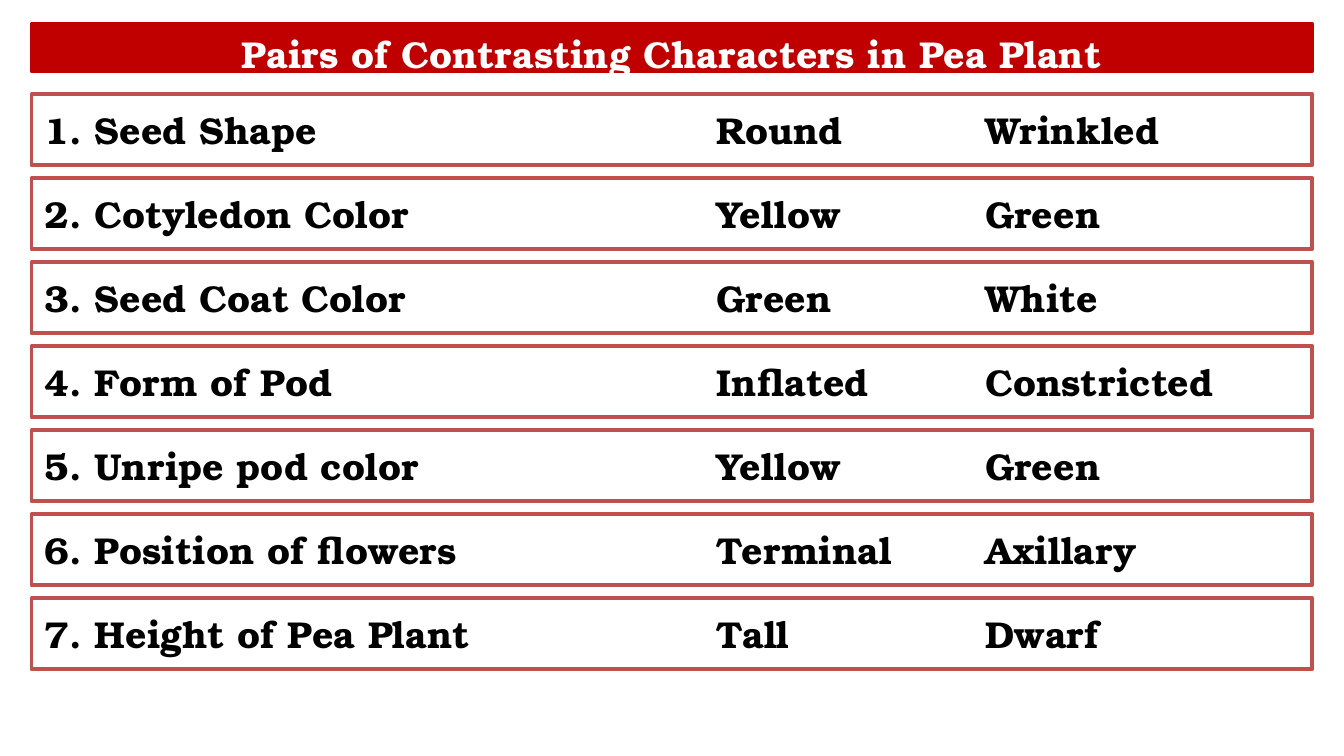
from lxml.etree import SubElement
from pptx import Presentation
from pptx.dml.color import RGBColor
from pptx.enum.shapes import MSO_SHAPE
from pptx.enum.text import MSO_ANCHOR, PP_ALIGN
from pptx.oxml.ns import qn
from pptx.util import Inches, Pt

RED = RGBColor(0xC0, 0x00, 0x00)
BORDER = RGBColor(0xC0, 0x50, 0x4D)
WHITE = RGBColor(0xFF, 0xFF, 0xFF)
BLACK = RGBColor(0x00, 0x00, 0x00)

SLIDE_WIDTH = 10
SLIDE_HEIGHT = SLIDE_WIDTH * 9 / 16
WIDTH = 9.53
LEFT = (SLIDE_WIDTH - WIDTH) / 2
TITLE_TOP, TITLE_HEIGHT = 0.18, 0.35
ROWS_TOP, ROW_HEIGHT = 0.7, 0.53
ROW_PITCH = SLIDE_HEIGHT / 9
TRAIT_COLUMNS = (5, 7)

CHARACTERS = [
    ("Seed Shape", "Round", "Wrinkled"),
    ("Cotyledon Color", "Yellow", "Green"),
    ("Seed Coat Color", "Green", "White"),
    ("Form of Pod", "Inflated", "Constricted"),
    ("Unripe pod color", "Yellow", "Green"),
    ("Position of flowers", "Terminal", "Axillary"),
    ("Height of Pea Plant", "Tall", "Dwarf"),
]

prs = Presentation()
prs.slide_width, prs.slide_height = Inches(SLIDE_WIDTH), Inches(SLIDE_HEIGHT)
s = prs.slides.add_slide(prs.slide_layouts[6])


def add_bar(top, height, fill, line, text, color, align, anchor):
    sp = s.shapes.add_shape(MSO_SHAPE.RECTANGLE, Inches(LEFT), Inches(top),
                            Inches(WIDTH), Inches(height))
    sp.shadow.inherit = False
    sp.fill.solid()
    sp.fill.fore_color.rgb = fill
    sp.line.color.rgb = line
    sp.line.width = Pt(2)
    tf = sp.text_frame
    tf.word_wrap = True
    tf.vertical_anchor = anchor
    p = tf.paragraphs[0]
    p.alignment = align
    r = p.add_run()
    r.text = text
    r.font.name = "TeX Gyre Bonum"
    r.font.size = Pt(20)
    r.font.bold = True
    r.font.color.rgb = color
    return p


add_bar(TITLE_TOP, TITLE_HEIGHT, RED, RED,
        "Pairs of Contrasting Characters in Pea Plant",
        WHITE, PP_ALIGN.CENTER, MSO_ANCHOR.TOP)

for i, (name, first, second) in enumerate(CHARACTERS):
    p = add_bar(ROWS_TOP + i * ROW_PITCH, ROW_HEIGHT, WHITE, BORDER,
                f"{i + 1}. {name}\t{first}\t{second}",
                BLACK, PP_ALIGN.LEFT, MSO_ANCHOR.MIDDLE)
    tabs = SubElement(p._p.get_or_add_pPr(), qn("a:tabLst"))
    for column in TRAIT_COLUMNS:
        SubElement(tabs, qn("a:tab"), pos=str(Inches(column)), algn="l")

prs.save("out.pptx")
